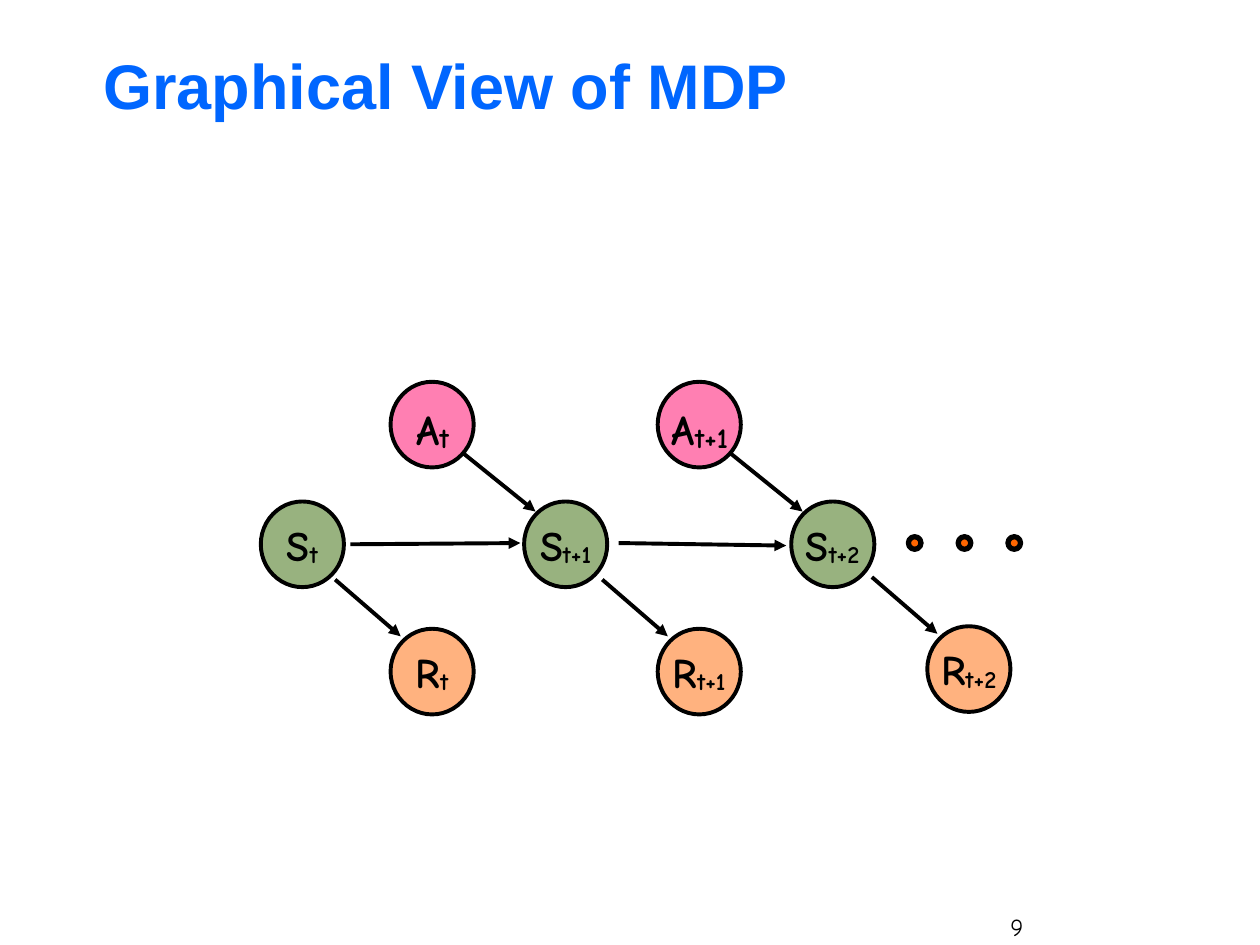
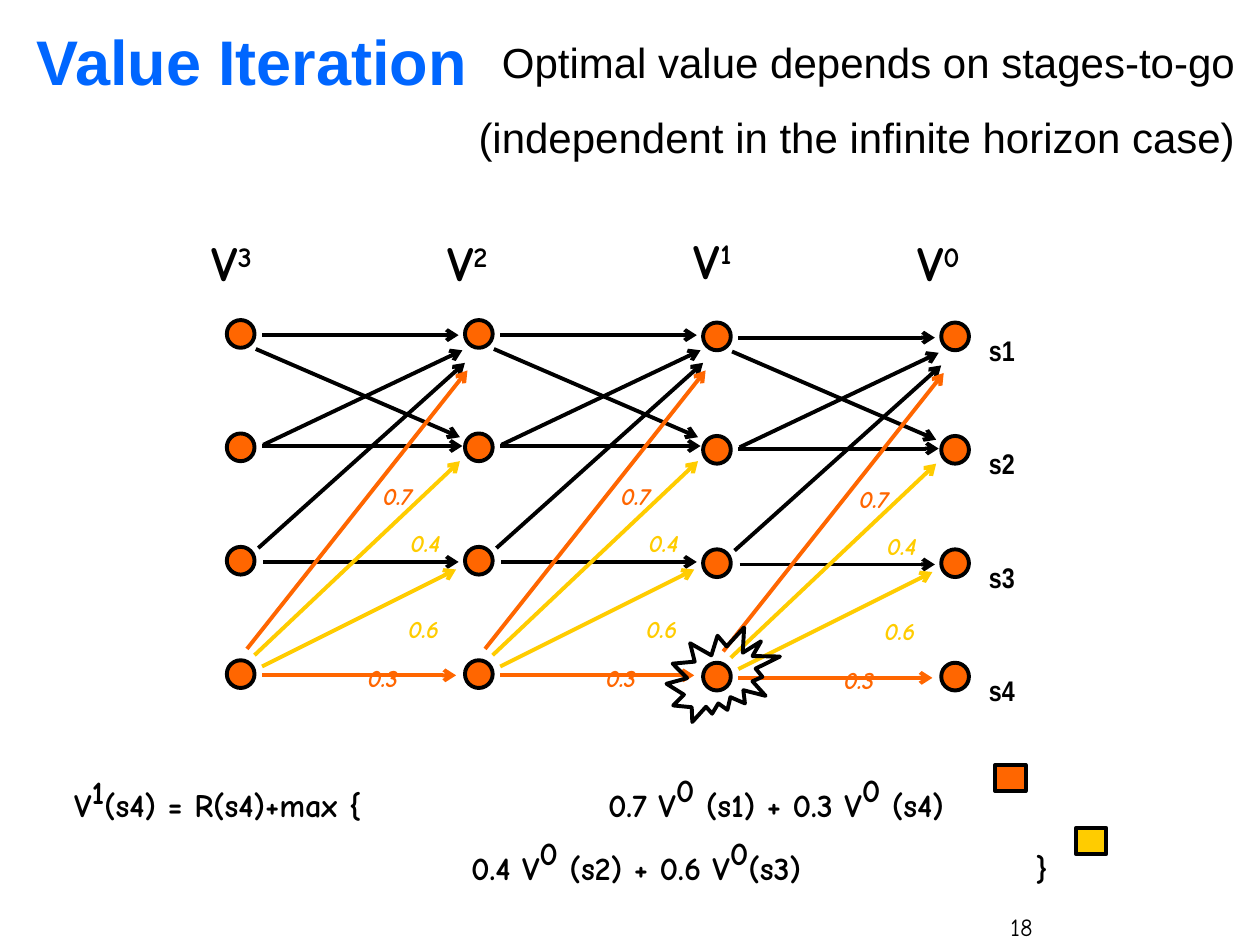
from dataclasses import dataclass

from lxml import etree
from pptx import Presentation
from pptx import util as u
from pptx.dml import color
from pptx.enum import shapes, text
from pptx.oxml import ns


@dataclass(frozen=True)
class Theme:
    title: str = "0066FF"
    ink: str = "000000"
    state: str = "336600"
    action: str = "FF0066"
    orange: str = "FF6600"
    yellow: str = "FFCC00"
    heading_font: str = "Arial"
    label_font: str = "Arial Narrow"
    body_font: str = "Comic Neue"
    title_size: int = 36
    formula_size: int = 32
    large_size: int = 28
    body_size: int = 24
    number_size: int = 14
    line_width: float = 2.25
    dot_width: float = 3


THEME = Theme()
CIRCLE = shapes.MSO_SHAPE.OVAL
SQUARE = shapes.MSO_SHAPE.RECTANGLE
LEFT, CENTER, RIGHT = text.PP_ALIGN.LEFT, text.PP_ALIGN.CENTER, text.PP_ALIGN.RIGHT


def rgb(value):
    return color.RGBColor.from_string(value)


def inches(*values):
    return [u.Inches(value) for value in values]


def add_span(para, words, size, font=THEME.body_font, ink=THEME.ink,
             bold=True, italic=False, baseline=0):
    span = para.add_run()
    span.text = words
    span.font.name = font
    span.font.size = u.Pt(size)
    span.font.bold = bold
    span.font.italic = italic
    span.font.color.rgb = rgb(ink)
    if baseline:
        span._r.get_or_add_rPr().set("baseline", str(baseline * 1000))


def add_text(page, at, spans, align=LEFT, wrap=False, grow=True):
    box = page.shapes.add_textbox(*inches(*at))
    frame = box.text_frame
    frame.word_wrap = wrap
    if grow:
        frame.auto_size = text.MSO_AUTO_SIZE.SHAPE_TO_FIT_TEXT
    para = frame.paragraphs[0]
    para.alignment = align
    for words, style in spans:
        add_span(para, words, **style)
    return box


def add_shape(page, kind, at, fill=None, width=THEME.line_width, alpha=None):
    shape = page.shapes.add_shape(kind, *inches(*at))
    shape.shadow.inherit = False
    shape.line.color.rgb = rgb(THEME.ink)
    shape.line.width = u.Pt(width)
    if fill is None:
        shape.fill.background()
        return shape
    shape.fill.solid()
    shape.fill.fore_color.rgb = rgb(fill)
    if alpha:
        tint = shape._element.spPr.find(ns.qn("a:solidFill"))[0]
        etree.SubElement(tint, ns.qn("a:alpha")).set("val", str(alpha * 1000))
    return shape


def add_arrow(page, start, end, head, ink=THEME.ink):
    arrow = page.shapes.add_connector(
        shapes.MSO_CONNECTOR.STRAIGHT, *inches(*start, *end))
    arrow.line.color.rgb = rgb(ink)
    arrow.line.width = u.Pt(THEME.line_width)
    tail = etree.SubElement(arrow.line._get_or_add_ln(), ns.qn("a:tailEnd"))
    tail.set("type", head)
    etree.SubElement(arrow._element.spPr, ns.qn("a:effectLst"))


def add_page(deck, heading, left, top, number):
    page = deck.slides.add_slide(deck.slide_layouts[5])
    title = page.shapes.title
    title.left, title.top, title.width, title.height = inches(left, top, 8.5, 0.68)
    frame = title.text_frame
    frame.auto_size = text.MSO_AUTO_SIZE.NONE
    frame.vertical_anchor = text.MSO_ANCHOR.MIDDLE
    frame.paragraphs[0].alignment = LEFT
    add_span(frame.paragraphs[0], heading, THEME.title_size,
             THEME.heading_font, THEME.title)
    add_text(page, (7.92, 7.19, 2.08, 0.25),
             [(number, dict(size=THEME.number_size, bold=False))],
             wrap=True, grow=False)
    return page


def variable(letter, index, index_size=THEME.body_size):
    return [(letter, dict(size=THEME.body_size)),
            (index, dict(size=index_size, baseline=-6))]


def add_node(page, left, top, fill, spans=()):
    node = add_shape(page, CIRCLE, (left, top, 0.66, 0.68), fill, alpha=50)
    frame = node.text_frame
    frame.word_wrap = False
    frame.vertical_anchor = text.MSO_ANCHOR.MIDDLE
    frame.paragraphs[0].alignment = CENTER
    for words, style in spans:
        add_span(frame.paragraphs[0], words, **style)


def build_graphical_view(deck):
    page = add_page(deck, "Graphical View of MDP", 0.72, 0.33, "9")
    times = ("t", "t+1", "t+2")
    stage_width = 2.12
    reward_places = ((3.1, 4.99), (5.22, 4.99), (7.36, 4.97))
    for time, state_left, reward_place in zip(times, (2.07, 4.16, 6.28), reward_places):
        add_node(page, state_left, 3.98, THEME.state, variable("S", time))
        add_node(page, *reward_place, THEME.orange, variable("R", time))

    for stage, (label_left, label_width) in enumerate(((3.15, 0.57), (5.11, 0.89))):
        shift = stage * stage_width
        add_node(page, 3.1 + shift, 3.03, THEME.action)
        add_text(page, (label_left, 3.1, label_width, 0.5),
                 variable("A", times[stage], THEME.large_size), CENTER)
        add_arrow(page, (3.68 + shift, 3.6), (4.25 + shift, 4.06), "triangle")

    for left, top in ((2.66, 4.6), (4.78, 4.6), (6.92, 4.58)):
        add_arrow(page, (left, top), (left + 0.52, top + 0.45), "triangle")
    add_arrow(page, (2.78, 4.32), (4.13, 4.31), "triangle")
    add_arrow(page, (4.91, 4.31), (6.24, 4.33), "triangle")

    for dot in range(3):
        add_shape(page, CIRCLE, (7.21 + dot * 0.395, 4.26, 0.1, 0.1),
                  THEME.orange, THEME.dot_width)


TRANSITIONS = (
    (2.08, 2.66, 3.64, 2.66, THEME.ink),
    (2.03, 2.77, 3.65, 3.47, THEME.ink),
    (2.08, 3.54, 3.67, 3.54, THEME.ink),
    (2.09, 3.53, 3.67, 2.78, THEME.ink),
    (2.05, 4.35, 3.69, 2.88, THEME.ink),
    (2.09, 4.46, 3.64, 4.46, THEME.ink),
    (2.08, 5.36, 3.62, 5.36, THEME.orange),
    (1.96, 5.15, 3.71, 2.94, THEME.orange),
    (2.08, 5.29, 3.62, 4.52, THEME.yellow),
    (2.02, 5.2, 3.65, 3.66, THEME.yellow),
)
PROBABILITIES = (
    ("0.3", 2.82, 5.04, THEME.orange),
    ("0.7", 2.94, 3.6, THEME.orange),
    ("0.4", 3.16, 3.97, THEME.yellow),
    ("0.6", 3.14, 4.65, THEME.yellow),
)


def add_stage(page, shift, drop):
    for left, top, right, bottom, ink in TRANSITIONS:
        add_arrow(page, (left + shift, top + drop), (right + shift, bottom + drop),
                  "arrow", ink)
    for value, left, top, ink in PROBABILITIES:
        style = dict(size=THEME.body_size, ink=ink, italic=True, baseline=-10)
        add_text(page, (left + shift, top + drop, 0.57, 0.37), [(value, style)])


def add_trellis(page):
    column_gap, row_gap = 1.89, 0.9
    drops = (0, 0, 0.02, 0.02)
    for stage, drop in enumerate(drops[:2] + drops[3:]):
        add_stage(page, stage * column_gap, drop)
    headings = (("3", 1.58, 1.8), ("2", 3.45, 1.8), ("1", 5.41, 1.78), ("0", 7.18, 1.8))
    for column, (power, left, top) in enumerate(headings):
        add_text(page, (left, top, 0.63, 0.57),
                 [("V", dict(size=THEME.large_size)),
                  (power, dict(size=THEME.large_size, baseline=30))])
        for row in range(4):
            add_shape(page, CIRCLE,
                      (1.8 + column * column_gap, 2.54 + row * row_gap + drops[column],
                       0.22, 0.22), THEME.orange)
    for row in range(4):
        style = dict(size=THEME.large_size, font=THEME.label_font, baseline=-10)
        add_text(page, (7.75, 2.39 + row * row_gap, 0.44, 0.42), [(f"s{row + 1}", style)])
    add_shape(page, shapes.MSO_SHAPE.EXPLOSION2, (5.29, 4.98, 0.9, 0.75))


def add_formula(page, left, top, width, parts, raised=16, align=LEFT):
    spans = [(words, dict(size=THEME.formula_size, baseline=raised if place % 2 else -10))
             for place, words in enumerate(parts)]
    add_text(page, (left, top, width, 0.45), spans, align)


def build_value_iteration(deck):
    page = add_page(deck, "Value Iteration", 0.19, 0.14, "18")
    add_trellis(page)

    first_line, second_line = 5.95, 6.45
    add_formula(page, 0.49, first_line, 3.24, ("V", "1", "(s4) = R(s4)+max {"), 14)
    add_formula(page, 3.66, first_line, 3.93,
                ("0.7 V", "0", " (s1) + 0.3 V", "0", " (s4)"), align=RIGHT)
    add_formula(page, 3.64, second_line, 3.81,
                ("0.4 V", "0", " (s2) + 0.6 V", "0", "(s3)"))
    add_formula(page, 8.12, second_line, 0.31, ("}",))
    add_shape(page, SQUARE, (7.9, first_line + 0.12, 0.24, 0.21), THEME.orange)
    add_shape(page, SQUARE, (8.54, second_line + 0.12, 0.24, 0.21), THEME.yellow)

    style = dict(size=THEME.body_size, font=THEME.heading_font, bold=False)
    remark = add_text(page, (3.67, 0.24, 6.23, 1.11),
                      [("Optimal value depends on stages-to-go", style)],
                      RIGHT, wrap=True)
    para = remark.text_frame.add_paragraph()
    para.alignment = RIGHT
    para.space_before = u.Pt(14)
    add_span(para, "(independent in the infinite horizon case)", **style)


def main():
    deck = Presentation()
    deck.slide_width, deck.slide_height = inches(10, 7.5)
    build_graphical_view(deck)
    build_value_iteration(deck)
    deck.save("out.pptx")


if __name__ == "__main__":
    main()
